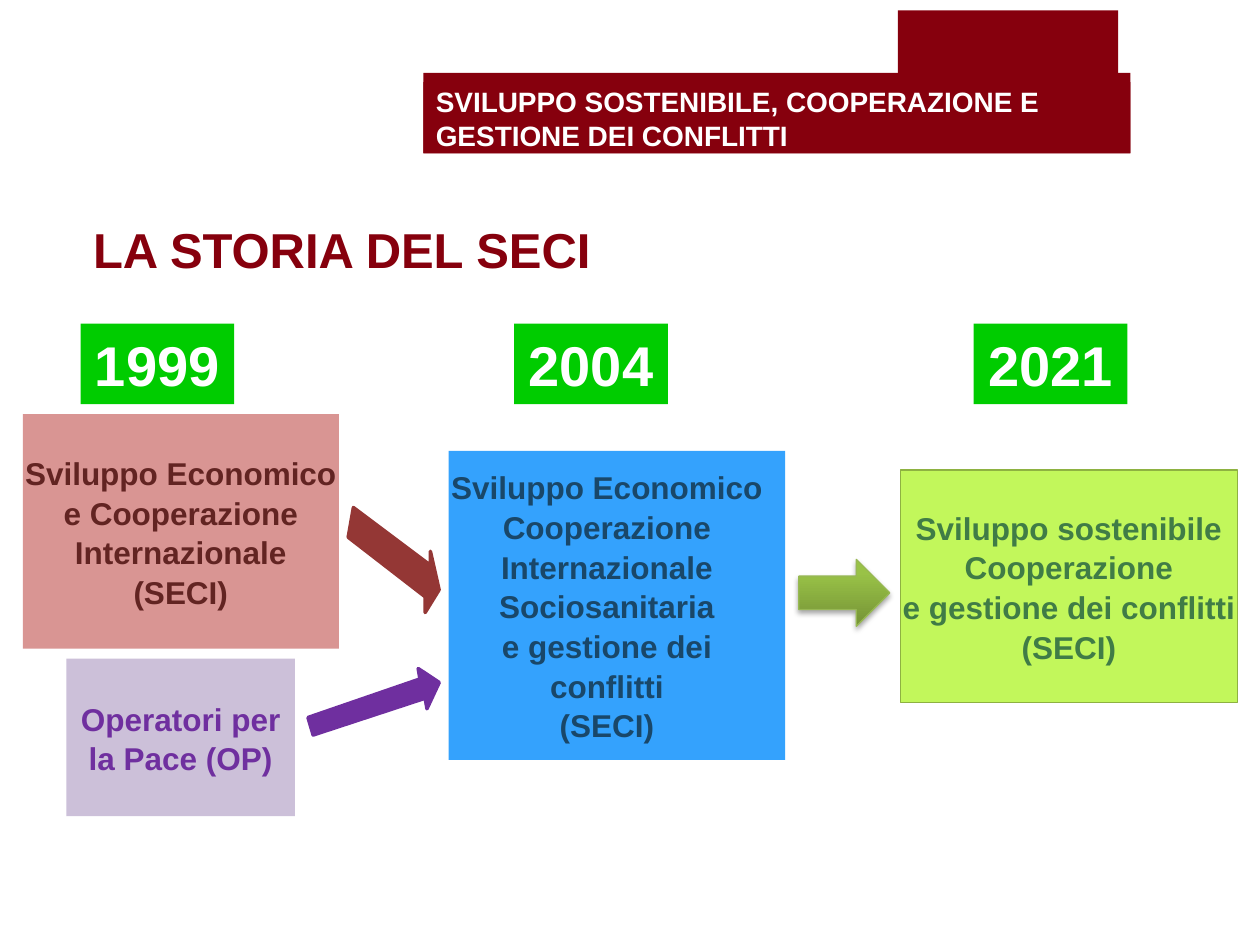
from dataclasses import dataclass
from typing import Optional

from lxml.etree import SubElement
from pptx import Presentation
from pptx.dml.color import RGBColor
from pptx.enum.shapes import MSO_SHAPE
from pptx.enum.text import MSO_ANCHOR, PP_ALIGN
from pptx.oxml.ns import qn
from pptx.util import Pt

MAROON, GREEN, WHITE = "86000D", "00CC00", "FFFFFF"


@dataclass
class Box:
    left: float
    top: float
    width: float
    height: float
    fill: str
    paragraphs: tuple[str, ...] = ()  # \v breaks a line inside a paragraph
    color: str = WHITE
    size: float = 18
    align: PP_ALIGN = PP_ALIGN.CENTER
    indent: float = 0
    spacing: float = 1.05
    first_right: float = 0  # right indent of the first paragraph
    outline: Optional[str] = None


@dataclass
class MergeArrow:
    color: str
    points: tuple[tuple[float, float], ...]


def rgb(color: str) -> RGBColor:
    return RGBColor.from_string(color)


def style_paragraph(paragraph, size: float, color: str, align: PP_ALIGN) -> None:
    paragraph.alignment = align
    for run in paragraph.runs:
        run.font.name = "Arial"
        run.font.size = Pt(size)
        run.font.bold = True
        run.font.color.rgb = rgb(color)


def paint(shape, fill: str, outline: Optional[str], width: float) -> None:
    shape.shadow.inherit = False
    shape.fill.solid()
    shape.fill.fore_color.rgb = rgb(fill)
    if outline:
        shape.line.color.rgb = rgb(outline)
        shape.line.width = Pt(width)
    else:
        shape.line.fill.background()


def draw_box(slide, box: Box) -> None:
    shape = slide.shapes.add_shape(
        MSO_SHAPE.RECTANGLE, Pt(box.left), Pt(box.top), Pt(box.width), Pt(box.height))
    paint(shape, box.fill, box.outline, 0.75)
    if not box.paragraphs:
        return
    frame = shape.text_frame
    frame.word_wrap = True
    frame.vertical_anchor = MSO_ANCHOR.MIDDLE
    frame.margin_left = Pt(box.indent)
    frame.margin_right = frame.margin_top = frame.margin_bottom = 0
    for index, text in enumerate(box.paragraphs):
        paragraph = frame.paragraphs[0] if index == 0 else frame.add_paragraph()
        paragraph.text = text
        paragraph.line_spacing = box.spacing
        style_paragraph(paragraph, box.size, box.color, box.align)
    if box.first_right:
        properties = frame.paragraphs[0]._p.get_or_add_pPr()
        properties.set("marR", str(Pt(box.first_right)))


def draw_merge_arrow(slide, arrow: MergeArrow) -> None:
    start, *others = arrow.points
    builder = slide.shapes.build_freeform(*start, scale=Pt(1))
    builder.add_line_segments(others, close=True)
    paint(builder.convert_to_shape(), arrow.color, arrow.color, 2)


def draw_final_arrow(slide) -> None:
    arrow = slide.shapes.add_shape(
        MSO_SHAPE.RIGHT_ARROW, Pt(456.5), Pt(319.7), Pt(52), Pt(38.2))
    arrow.fill.gradient()
    arrow.fill.gradient_angle = 90
    for stop, position, color in zip(
            arrow.fill.gradient_stops, (0, 0.8), ("759336", "99C247")):
        stop.position = position
        stop.color.rgb = rgb(color)
    arrow.line.color.rgb = rgb("97B853")
    arrow.line.width = Pt(0.75)
    # Soft shadow straight below
    arrow.shadow.inherit = False
    effects = arrow._element.spPr.find(qn("a:effectLst"))
    shadow = SubElement(effects, qn("a:outerShdw"), blurRad=str(Pt(3.1)),
                        dist=str(Pt(1.8)), dir="5400000", rotWithShape="0")
    tint = SubElement(shadow, qn("a:srgbClr"), val="000000")
    SubElement(tint, qn("a:alpha"), val="35000")


def draw_title(slide) -> None:
    title = slide.shapes.title
    title.left, title.top, title.width, title.height = Pt(46), Pt(121.9), Pt(314), Pt(41)
    title.text_frame.text = "LA STORIA DEL SECI"
    title.text_frame.vertical_anchor = MSO_ANCHOR.MIDDLE
    style_paragraph(title.text_frame.paragraphs[0], 28, MAROON, PP_ALIGN.LEFT)


HEADER = (
    Box(242, 41.6, 404, 46, MAROON),
    Box(242, 47, 404, 40.5, MAROON,
        ("SVILUPPO SOSTENIBILE, COOPERAZIONE E", "GESTIONE DEI CONFLITTI"),
        size=16, align=PP_ALIGN.LEFT, indent=7.2, spacing=1.03),
    Box(513, 6, 126, 41, MAROON),
)

YEARS = {"1999": 46, "2004": 293.8, "2021": 556.4}

COURSES = (
    Box(13, 236.7, 180.6, 134, "D99593",
        ("Sviluppo Economico\ve Cooperazione\vInternazionale\v(SECI)",), "622422"),
    Box(38, 376.4, 130.5, 90, "CCC0D9",
        ("Operatori per\vla Pace (OP)",), "6F2F9F"),
    Box(256.3, 257.6, 192.4, 176.6, "34A2FD",
        ("Sviluppo Economico\vCooperazione\vInternazionale\vSociosanitaria",
         "e gestione dei conflitti", "(SECI)"), "194769", first_right=11.4),
    Box(514.6, 268.6, 192.4, 132.8, "C2F75B",
        ("Sviluppo sostenibile", "Cooperazione", "e gestione dei conflitti", "(SECI)"),
        "407C46", outline="8EB241"),
)

MERGE_ARROWS = (
    MergeArrow("943735", ((201.6, 290.2), (245.5, 323.3), (246.2, 314.6), (250.6, 337),
                          (242.6, 349.9), (243.4, 341.3), (199.4, 307.4))),
    MergeArrow("6F2F9F", ((175.7, 409.7), (240.5, 388.1), (239, 382.3), (250.6, 390.2),
                          (244.1, 404.6), (242.6, 398.9), (178.6, 420.5))),
)


def main() -> None:
    presentation = Presentation()
    presentation.slide_width, presentation.slide_height = Pt(720), Pt(540)
    slide = presentation.slides.add_slide(presentation.slide_layouts[5])

    # Header and title
    for box in HEADER:
        draw_box(slide, box)
    draw_title(slide)

    # Timeline: years, courses and the arrows between them
    for year, left in YEARS.items():
        draw_box(slide, Box(left, 185, 87.8, 46, GREEN, (year,), size=32, spacing=1))
    for course in COURSES:
        draw_box(slide, course)
    for arrow in MERGE_ARROWS:
        draw_merge_arrow(slide, arrow)
    draw_final_arrow(slide)

    presentation.save("out.pptx")


if __name__ == "__main__":
    main()
